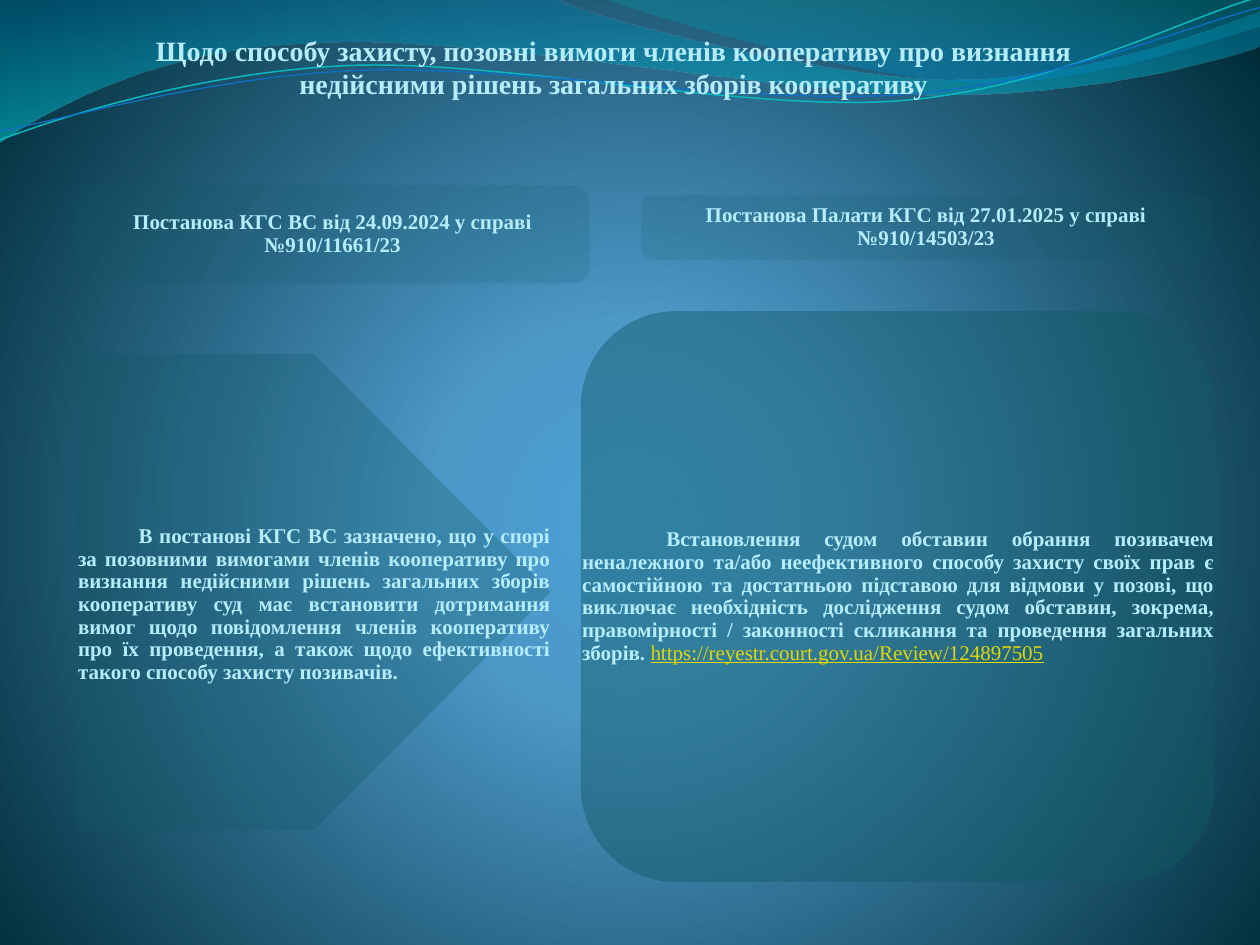
from math import cos, radians, sin

from lxml.etree import SubElement
from pptx import Presentation
from pptx.dml.color import RGBColor
from pptx.enum.shapes import MSO_SHAPE
from pptx.enum.text import MSO_ANCHOR, PP_ALIGN
from pptx.oxml.ns import qn
from pptx.util import Inches, Pt

SLIDE_W, SLIDE_H = Inches(10), Inches(7.5)
COL = SLIDE_W // 10  # square grid, 10 columns by 7.5 rows

FONT = "Times New Roman"
PALE = RGBColor(0xB5, 0xED, 0xFD)
LINK = RGBColor(0xE2, 0xD7, 0x00)
PANEL = RGBColor(0x11, 0x59, 0x64)
GLOW = RGBColor(0x4A, 0xA0, 0xD6)
SKY = RGBColor(0x4C, 0x98, 0xC7)
DEEP = RGBColor(0x00, 0x2C, 0x38)
BLUE = RGBColor(0x00, 0x74, 0xA1)
TURQUOISE = RGBColor(0x00, 0xC6, 0xCF)
TEAL = RGBColor(0x00, 0xA1, 0xA9)
AZURE = RGBColor(0x00, 0x8B, 0xBF)
CYAN_LINE = RGBColor(0x0A, 0xB8, 0xBF)
BLUE_LINE = RGBColor(0x0F, 0x6F, 0xC6)

# Each wave: start point, then lines (one point) and Bezier curves (three points)
LEFT_WAVE = [
    [(0, 0)], [(4.4, -0.01)],
    [(4.76, 0.17), (6.64, 0.63), (7.58, 0.63)], [(8.53, 0.63), (9.58, 0.26), (10, 0.09)],
    [(10.01, 0.36)],
    [(9.83, 0.44), (8.7, 0.76), (7.46, 0.75)], [(6.22, 0.75), (3.82, 0.28), (2.57, 0.34)],
    [(1.29, 0.36), (0.46, 0.83), (-0.01, 1.13)], [(0, 0)],
]
RIGHT_WAVE = [
    [(4.79, -0.01)], [(5.09, 0.11), (6.82, 0.62), (7.69, 0.65)],
    [(8.56, 0.69), (9.61, 0.32), (10, 0.21)], [(10, 0)], [(4.79, -0.01)],
]
CYAN_CURVE = [
    [(0, 1.11)], [(0.48, 0.93), (1.58, 0.57), (2.77, 0.52)],
    [(3.95, 0.47), (5.93, 0.89), (7.13, 0.8)], [(8.33, 0.71), (9.38, 0.15), (9.98, -0.02)],
]
BLUE_CURVE = [
    [(0, 1.04)], [(0.47, 0.96), (1.64, 0.61), (2.83, 0.56)],
    [(4.03, 0.51), (5.97, 0.84), (7.17, 0.75)], [(8.36, 0.67), (9.41, 0.21), (10, 0.06)],
]
CURVE_TILT = -2.7


def grid(*lengths):
    return [round(length * COL) for length in lengths]


def set_opacity(color_element, percent):
    SubElement(color_element, qn("a:alpha"), val=str(percent * 1000))


def paint_gradient(properties, stops):
    """Turn the solid fill into a gradient and return it for its direction."""
    solid = properties.find(qn("a:solidFill"))
    gradient = solid.makeelement(qn("a:gradFill"), {"rotWithShape": "1"})
    properties.replace(solid, gradient)
    stop_list = SubElement(gradient, qn("a:gsLst"))
    for position, color, opacity in stops:
        stop = SubElement(stop_list, qn("a:gs"), pos=str(position * 1000))
        color_element = SubElement(stop, qn("a:srgbClr"), val=str(color))
        if opacity < 100:
            set_opacity(color_element, opacity)
    return gradient


def paint_background(slide):
    slide.background.fill.solid()
    gradient = paint_gradient(slide.element.find(".//" + qn("p:bgPr")),
                              [(0, GLOW, 100), (25, SKY, 100), (100, DEEP, 100)])
    circle = SubElement(gradient, qn("a:path"))
    circle.set("path", "circle")
    SubElement(circle, qn("a:fillToRect"), l="10000", t="110000", r="10000", b="100000")


def turn(point, pivot, degrees):
    dx, dy = point[0] - pivot[0], point[1] - pivot[1]
    c, s = cos(radians(degrees)), sin(radians(degrees))
    return pivot[0] + dx * c - dy * s, pivot[1] + dx * s + dy * c


def add_wave(slide, origin, outline, close, tilt=0, pivot=(0, 0)):
    """Freeform of lines and Bezier curves, levelled first and then tilted."""
    segments = [[turn(point, pivot, -tilt) for point in segment] for segment in outline]
    points = [grid(origin[0] + x, origin[1] + y) for segment in segments for x, y in segment]
    builder = slide.shapes.build_freeform(*points[0])
    builder.add_line_segments(points[1:], close=close)
    wave = builder.convert_to_shape()
    wave.rotation = tilt
    wave.shadow.inherit = False
    # Gather the control points of each curve into one Bezier segment
    lines = iter(wave.element.spPr.findall(".//" + qn("a:lnTo")))
    for segment in outline[1:]:
        parts = [next(lines) for _ in segment]
        if len(parts) == 3:
            bezier = parts[0].makeelement(qn("a:cubicBezTo"), {})
            parts[0].addprevious(bezier)
            for part in parts:
                bezier.append(part[0])
                part.getparent().remove(part)
    return wave


def add_waves(slide, origin):
    for outline, stops in (
        (LEFT_WAVE, [(0, BLUE, 45), (100, TURQUOISE, 55)]),
        (RIGHT_WAVE, [(0, TEAL, 30), (80, AZURE, 45)]),
    ):
        wave = add_wave(slide, origin, outline, True)
        wave.line.fill.background()
        wave.fill.solid()
        gradient = paint_gradient(wave.element.spPr, stops)
        SubElement(gradient, qn("a:lin"), ang="5400000", scaled="0")

    for outline, pivot, color, width in (
        (CYAN_CURVE, (4.99, 0.58), CYAN_LINE, 0.85),
        (BLUE_CURVE, (5, 0.59), BLUE_LINE, 0.75),
    ):
        curve = add_wave(slide, origin, outline, False, CURVE_TILT, pivot)
        curve.fill.background()
        curve.line.color.rgb = color
        curve.line.width = Pt(width)


def add_text(slide, box, runs, size, align, anchor, insets, spacing, indent=0):
    frame = slide.shapes.add_textbox(*grid(*box)).text_frame
    frame.word_wrap = True
    frame.vertical_anchor = anchor
    (frame.margin_left, frame.margin_top,
     frame.margin_right, frame.margin_bottom) = grid(*insets)
    paragraph = frame.paragraphs[0]
    paragraph.alignment = align
    paragraph.line_spacing = spacing
    if indent:
        paragraph._p.get_or_add_pPr().set("indent", str(grid(indent)[0]))
    for text, color, is_link in runs:
        run = paragraph.add_run()
        run.text = text
        run.font.name = FONT
        run.font.size = Pt(size)
        run.font.color.rgb = color
        run.font.bold = not is_link
        run.font.underline = is_link


def add_panel(slide, kind, box, opacity):
    panel = slide.shapes.add_shape(kind, *grid(*box))
    panel.shadow.inherit = False
    panel.line.fill.background()
    panel.fill.solid()
    panel.fill.fore_color.rgb = PANEL
    set_opacity(panel.element.spPr.find(".//" + qn("a:srgbClr")), opacity)


def add_ruling(slide, origin, heading, heading_box, heading_opacity,
               kind, body_box, body_opacity, body, indent, drop=0.01):
    """Heading plate with the court's position below; boxes are relative to origin."""
    body_box, heading_box = [(origin[0] + x, origin[1] + y, w, h)
                             for x, y, w, h in (body_box, heading_box)]
    # Position of the court
    add_panel(slide, kind, body_box, body_opacity)
    add_text(slide, body_box, body, 12, PP_ALIGN.JUSTIFY, MSO_ANCHOR.MIDDLE,
             (0.01, drop, 0, 0.01), 0.9, indent)
    # Case heading
    add_panel(slide, MSO_SHAPE.ROUNDED_RECTANGLE, heading_box, heading_opacity)
    add_text(slide, heading_box, [(heading, PALE, False)], 12, PP_ALIGN.CENTER,
             MSO_ANCHOR.MIDDLE, (0.05,) * 4, 0.9)


def main():
    deck = Presentation()
    deck.slide_width, deck.slide_height = SLIDE_W, SLIDE_H
    slide = deck.slides.add_slide(deck.slide_layouts[6])
    paint_background(slide)
    add_waves(slide, (0, 0))
    title = ("Щодо способу захисту, позовні вимоги членів кооперативу про визнання "
             "недійсними рішень загальних зборів кооперативу")
    add_text(slide, (0.67, 0.28, 8.42, 0.53), [(title, PALE, False)], 16,
             PP_ALIGN.CENTER, MSO_ANCHOR.TOP, (0, 0, 0.02, 0), 0.98)
    add_ruling(
        slide, (0.6, 1.47),
        "Постанова КГС ВС від 24.09.2024 у справі №910/11661/23", (0, 0, 4.08, 0.78), 17,
        MSO_SHAPE.PENTAGON, (0.01, 1.34, 3.76, 3.78), 29,
        [("В постанові КГС ВС зазначено, що у спорі за позовними вимогами членів "
          "кооперативу про визнання недійсними рішень загальних зборів кооперативу суд "
          "має встановити дотримання вимог щодо повідомлення членів кооперативу про їх "
          "проведення, а також щодо ефективності такого способу захисту позивачів.",
          PALE, False)],
        indent=0.48, drop=0.21)
    add_ruling(
        slide, (4.61, 1.47),
        "Постанова Палати КГС від 27.01.2025 у справі №910/14503/23", (0.48, 0.08, 4.52, 0.51), 16,
        MSO_SHAPE.FLOWCHART_ALTERNATE_PROCESS, (0, 1, 5.03, 4.53), 44,
        [("Встановлення судом обставин обрання позивачем неналежного та/або "
          "неефективного способу захисту своїх прав є самостійною та достатньою "
          "підставою для відмови у позові, що виключає необхідність дослідження судом "
          "обставин, зокрема, правомірності / законності скликання та проведення "
          "загальних зборів. ", PALE, False),
         ("https://reyestr.court.gov.ua/Review/124897505", LINK, True)],
        indent=0.67)
    deck.save("out.pptx")


if __name__ == "__main__":
    main()
